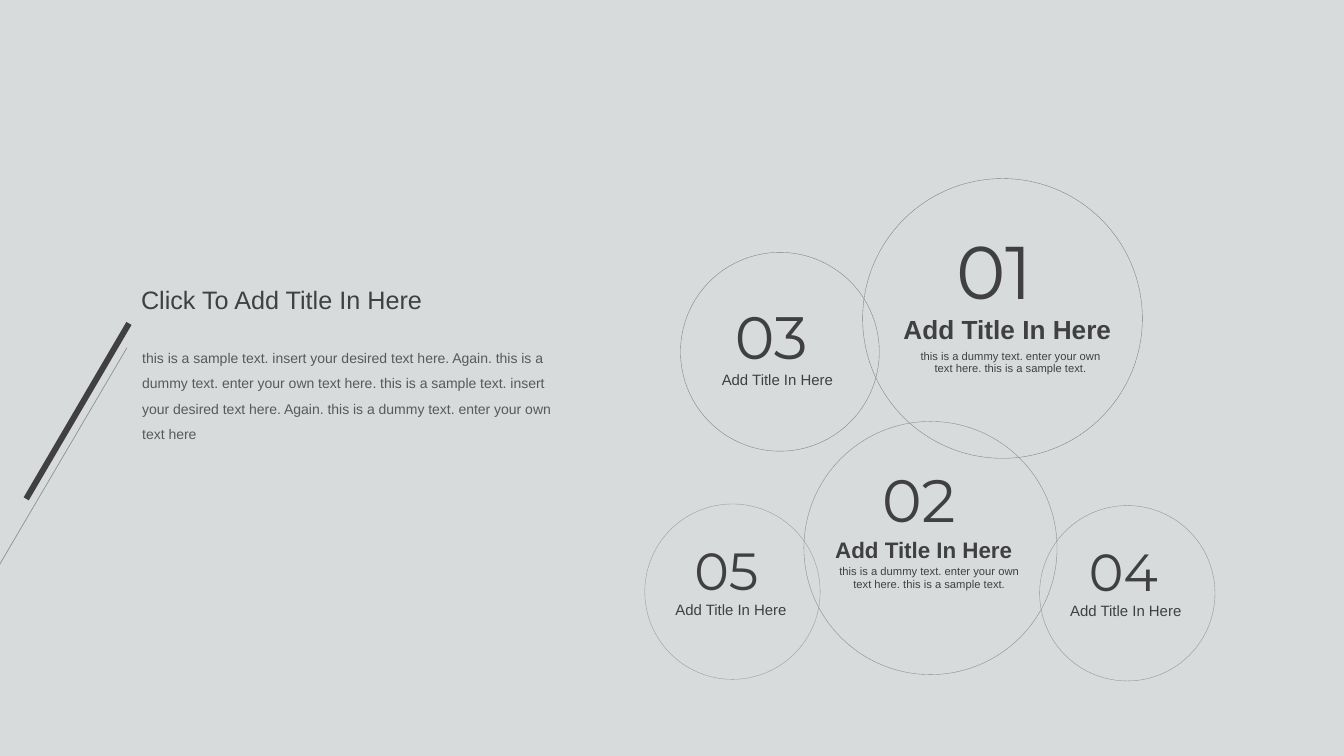
from lxml import etree
from pptx import Presentation
from pptx.dml.color import RGBColor
from pptx.enum.shapes import MSO_CONNECTOR, MSO_SHAPE
from pptx.enum.text import MSO_ANCHOR, MSO_AUTO_SIZE, PP_ALIGN
from pptx.oxml.ns import qn
from pptx.util import Cm, Pt

LEFT, CENTER = PP_ALIGN.LEFT, PP_ALIGN.CENTER
TOP = MSO_ANCHOR.TOP
GROW = MSO_AUTO_SIZE.SHAPE_TO_FIT_TEXT
OVAL = MSO_SHAPE.OVAL
STRAIGHT = MSO_CONNECTOR.STRAIGHT

DARK, BODY, GREY, PAPER = "404040", "595959", "808080", "D7DBDC"
NUMBER_BOX = {53.3: (3.02, 2.51), 42.7: (2.51, 2.06), 37.3: (2.26, 1.83)}
TITLE_BOX = {18.7: (5.8, 1.04), 16: (5, 0.94), 10.7: (3.35, 0.71)}
NOTE_BOX = (5.16, 0.89)
NOTE = "this is a dummy text. enter your own text here. this is a sample text."
INTRO = ("this is a sample text. insert your desired text here. Again. "
         "this is a dummy text. enter your own text here. "
         "this is a sample text. insert your desired text here. Again. "
         "this is a dummy text. enter your own text here")

CIRCLES = [
    ("01", (21.74, 4.5, 7.05), 100, (23.85, 5.54), 53.3, (22.52, 7.77), 18.7, (22.89, 8.69)),
    ("02", (20.26, 10.62, 6.38), 89, (21.98, 11.53), 42.7, (20.8, 13.39), 16, (20.84, 14.12)),
    ("03", (17.15, 6.36, 5.01), 100, (18.27, 7.44), 42.7, (17.94, 9.22), 10.7, None),
    ("04", (26.2, 12.74, 4.42), 80, (27.19, 13.46), 37.3, (26.72, 15.04), 10.7, None),
    ("05", (16.25, 12.7, 4.42), 70, (17.25, 13.44), 37.3, (16.77, 15.01), 10.7, None),
]


def rgb(value):
    """Turn a hex string into a colour."""
    return RGBColor.from_string(value)


def write(sp, text, size, font="Arial", color=DARK, bold=False, align=LEFT,
          spacing=None, wrap=False):
    """Put one formatted paragraph into a shape."""
    tf = sp.text_frame
    tf.word_wrap = wrap
    tf.auto_size = GROW
    tf.vertical_anchor = TOP
    p = tf.paragraphs[0]
    p.alignment = align
    p.space_before = Pt(0)
    if spacing:
        p.line_spacing = spacing
    r = p.add_run()
    r.text = text
    r.font.name = font
    r.font.size = Pt(size)
    r.font.bold = bold
    r.font.color.rgb = rgb(color)


class Deck:
    """Hold the style and the current slide."""

    def __init__(self):
        """Open a widescreen slide with a plain background."""
        self.prs = Presentation()
        self.prs.slide_width = Cm(33.87)
        self.prs.slide_height = Cm(19.05)
        self.s = self.prs.slides.add_slide(self.prs.slide_layouts[1])
        fill = self.s.background.fill
        fill.solid()
        fill.fore_color.rgb = rgb(PAPER)

    def placeholder(self, idx, box, text, size, **fmt):
        """Move a template placeholder and fill it without a bullet."""
        sp = self.s.placeholders[idx]
        sp.left, sp.top, sp.width, sp.height = map(Cm, box)
        pPr = sp.text_frame.paragraphs[0]._p.get_or_add_pPr()
        pPr.set("marL", "0")
        pPr.set("indent", "0")
        etree.SubElement(pPr, qn("a:buNone"))
        write(sp, text, size, **fmt)

    def text(self, pos, box, text, size, **fmt):
        """Add a text box."""
        sp = self.s.shapes.add_textbox(*map(Cm, pos + box))
        write(sp, text, size, **fmt)

    def stroke(self, line, color, width, opacity):
        """Format an outline, with opacity in percent."""
        line.color.rgb = rgb(color)
        line.width = Pt(width)
        if opacity < 100:
            clr = line.fill._xPr.find(qn("a:solidFill"))[0]
            etree.SubElement(clr, qn("a:alpha")).set("val", str(opacity * 1000))

    def circle(self, left, top, size, opacity):
        """Add a thin unfilled circle."""
        sp = self.s.shapes.add_shape(OVAL, *map(Cm, (left, top, size, size)))
        sp.shadow.inherit = False
        sp.fill.background()
        self.stroke(sp.line, GREY, 0.25, opacity)

    def line(self, ends, width, opacity=100):
        """Add a straight line."""
        sp = self.s.shapes.add_connector(STRAIGHT, *map(Cm, ends))
        self.stroke(sp.line, DARK, width, opacity)
        etree.SubElement(sp._element.spPr, qn("a:effectLst"))


def main():
    """Build the slide and save it."""
    deck = Deck()
    deck.placeholder(0, (3.3, 7.04, 7.65, 1.02), "Click To Add Title In Here", 18)
    deck.placeholder(1, (3.33, 8.47, 11.28, 2.79), INTRO, 10, color=BODY,
                     spacing=1.5, wrap=True)
    for number, ring, opacity, num_pos, num_size, title_pos, title_size, note_pos in CIRCLES:
        deck.circle(*ring, opacity)
        deck.text(num_pos, NUMBER_BOX[num_size], number, num_size, font="Montserrat")
        if note_pos:
            deck.text(note_pos, NOTE_BOX, NOTE, 8, align=CENTER, spacing=Pt(9), wrap=True)
        deck.text(title_pos, TITLE_BOX[title_size], "Add Title In Here", title_size,
                  bold=note_pos is not None)
    deck.line((3.25, 8.15, 0.66, 12.57), 4.25)
    deck.line((3.2, 8.76, -1.47, 16.71), 0.5, 48)
    deck.prs.save("out.pptx")


if __name__ == "__main__":
    main()
